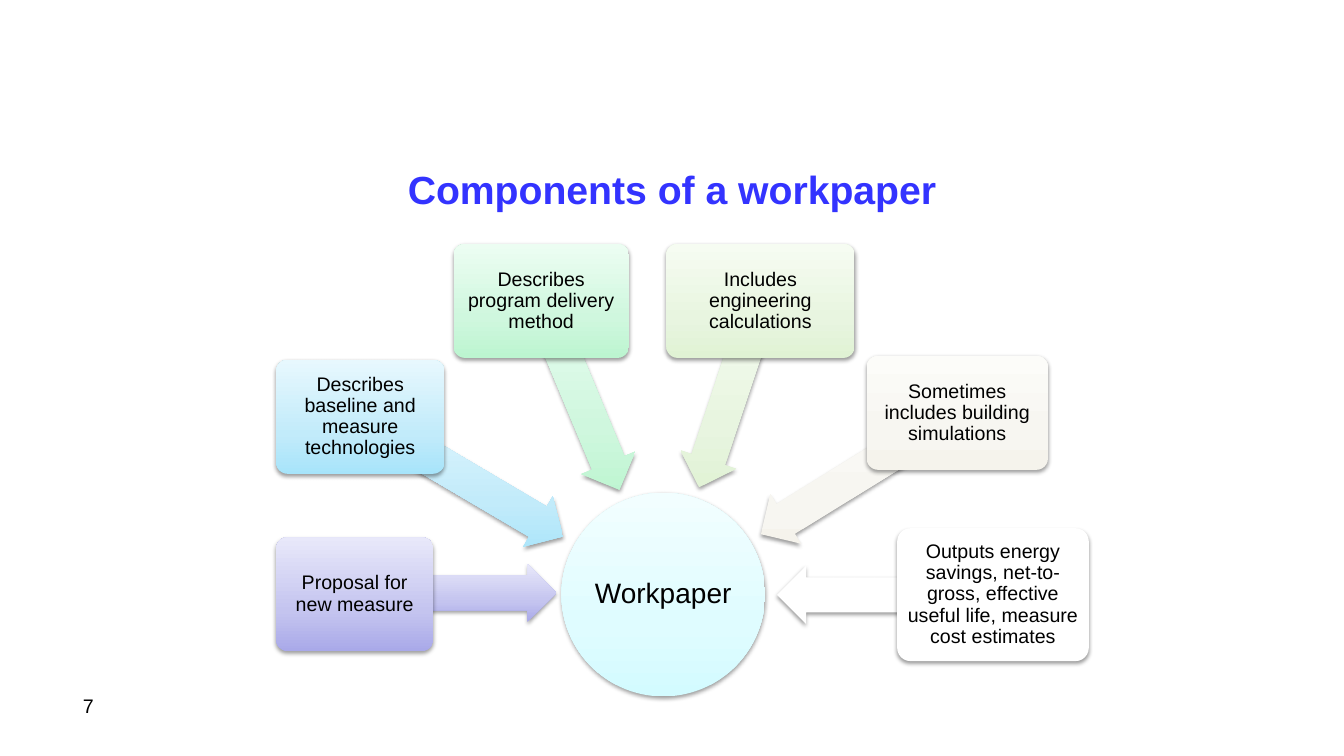
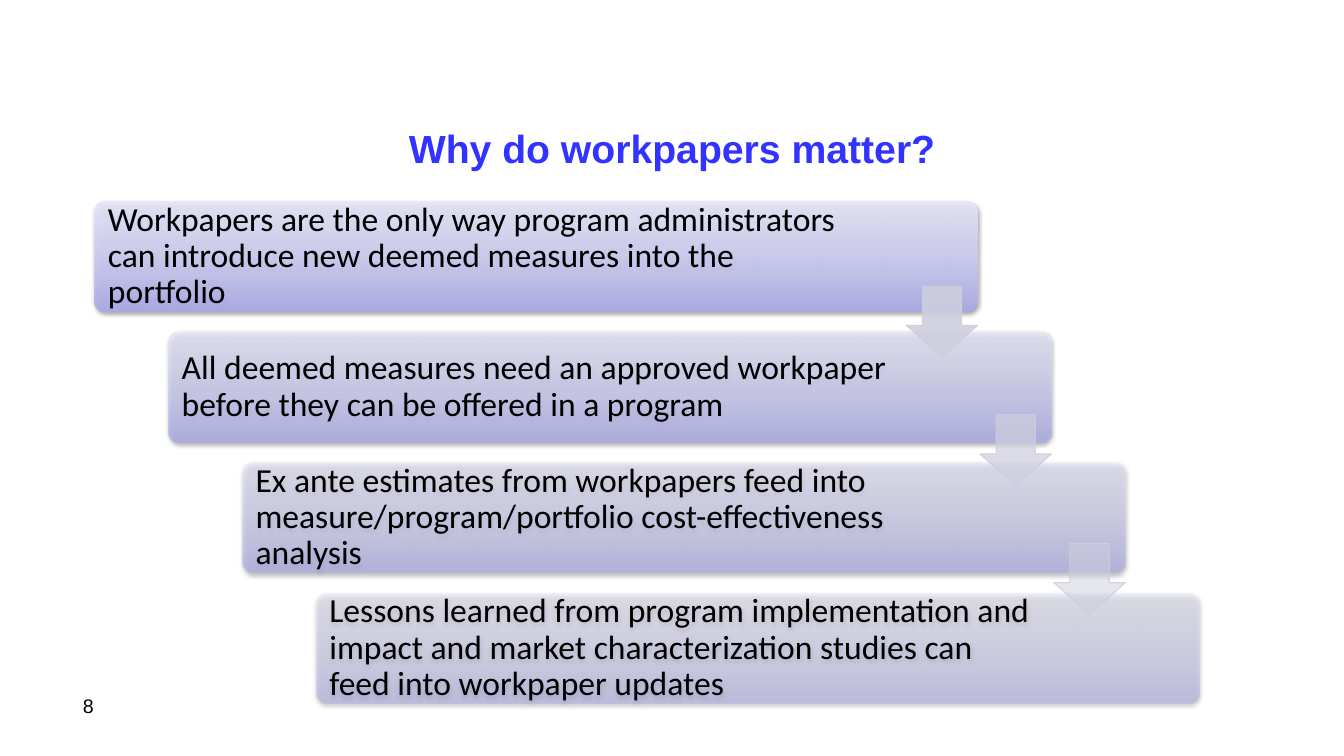
from dataclasses import dataclass

from lxml.etree import SubElement
from pptx import Presentation
from pptx.dml.color import RGBColor
from pptx.enum.shapes import MSO_SHAPE as Preset
from pptx.enum.text import MSO_ANCHOR as Anchor, PP_ALIGN as Align
from pptx.oxml.ns import qn
from pptx.shapes.autoshape import Shape
from pptx.slide import Slide
from pptx.util import Cm, Pt

Gradient = tuple[str, str, str]


@dataclass(frozen=True)
class Theme:
    title_color: str = "3333FF"
    text_color: str = "000000"
    shadow_color: str = "000000"
    arrow_color: str = "CECEDE"
    white: str = "FFFFFF"
    aqua: Gradient = ("D3FBFF", "DFFCFF", "F2FEFF")
    violet: Gradient = ("A9A9E9", "C4C4EF", "E8E8FA")
    sky: Gradient = ("A7E4FA", "C2EBFA", "E7F8FE")
    mint: Gradient = ("BCF5D0", "CFF7DE", "ECFDF2")
    lime: Gradient = ("E0F2D4", "E8F5E0", "F6FCF2")
    sand: Gradient = ("F5F3EC", "F7F6F1", "FCFCF9")
    stops: tuple[int, int, int] = (0, 35, 100)
    font: str = "Arial"
    step_font: str = "Calibri"
    title_size: int = 28
    step_size: int = 24
    hub_size: int = 20
    body_size: int = 14


THEME = Theme()
SLIDE_WIDTH, SLIDE_HEIGHT = 33.87, 19.05


@dataclass(frozen=True)
class Area:
    left: float
    top: float
    width: float
    height: float

    def lengths(self) -> tuple[Cm, Cm, Cm, Cm]:
        return Cm(self.left), Cm(self.top), Cm(self.width), Cm(self.height)


@dataclass(frozen=True)
class Spoke:
    center_x: float
    center_y: float
    length: float
    angle: float

    def area(self, thickness: float) -> Area:
        return Area(self.center_x - self.length / 2, self.center_y - thickness / 2,
                    self.length, thickness)


@dataclass(frozen=True)
class Component:
    text: str
    area: Area
    spoke: Spoke
    fill: Gradient | str


BOX_HEIGHT = 2.87
COMPONENTS = (
    Component("Proposal for new measure", Area(6.96, 13.54, 3.96, BOX_HEIGHT),
              Spoke(11.56, 14.94, 4.93, 180), THEME.violet),
    Component("Describes baseline and measure technologies",
              Area(6.96, 9.07, 4.24, BOX_HEIGHT),
              Spoke(11.63, 12.01, 5.94, 210.5), THEME.sky),
    Component("Describes program delivery method",
              Area(11.43, 6.15, 4.42, BOX_HEIGHT),
              Spoke(14.62, 9.96, 5.16, 247.4), THEME.mint),
    Component("Includes engineering calculations",
              Area(16.79, 6.15, 4.75, BOX_HEIGHT),
              Spoke(18.4, 9.93, 4.95, 288.4), THEME.lime),
    Component("Sometimes includes building simulations",
              Area(21.84, 8.97, 4.57, BOX_HEIGHT),
              Spoke(21.64, 11.94, 5.79, 328.3), THEME.sand),
    Component("Outputs energy savings, net-to-gross, effective useful life, "
              "measure cost estimates", Area(22.61, 13.31, 4.83, 3.35),
              Spoke(22.3, 14.99, 5.44, 0), THEME.white),
)

REASONS = (
    "Workpapers are the only way program administrators can introduce new "
    "deemed measures into the portfolio",
    "All deemed measures need an approved workpaper before they can be "
    "offered in a program",
    "Ex ante estimates from workpapers feed into "
    "measure/program/portfolio cost-effectiveness analysis",
    "Lessons learned from program implementation and impact and market "
    "characterization studies can feed into workpaper updates",
)


def add_color(parent, color: str, alpha: float):
    node = SubElement(parent, qn("a:srgbClr"), val=color)
    if alpha < 100:
        SubElement(node, qn("a:alpha"), val=str(round(alpha * 1000)))


def paint(shape: Shape, fill: Gradient | str, alpha: float = 100):
    shape.fill.solid()
    solid = shape.element.spPr.find(qn("a:solidFill"))
    if isinstance(fill, str):
        for child in list(solid):
            solid.remove(child)
        add_color(solid, fill, alpha)
        return
    gradient = solid.makeelement(qn("a:gradFill"), {"rotWithShape": "0"})
    stops = SubElement(gradient, qn("a:gsLst"))
    for position, color in zip(THEME.stops, fill):
        stop = SubElement(stops, qn("a:gs"), pos=str(position * 1000))
        add_color(stop, color, alpha)
    SubElement(gradient, qn("a:lin"), ang="16200000", scaled="0")
    solid.getparent().replace(solid, gradient)


def add_shadow(shape: Shape):
    effects = shape.element.spPr.find(qn("a:effectLst"))
    shadow = SubElement(effects, qn("a:outerShdw"), blurRad=str(Pt(3.1)),
                        dist=str(Pt(1.6)), dir="5400000", rotWithShape="0")
    add_color(shadow, THEME.shadow_color, 38)


def add_preset(slide: Slide, preset: Preset, area: Area, adjustments: tuple[float, ...],
               fill: Gradient | str, alpha: float = 100, shadow: bool = True) -> Shape:
    shape = slide.shapes.add_shape(preset, *area.lengths())
    for index, value in enumerate(adjustments):
        shape.adjustments[index] = value
    paint(shape, fill, alpha)
    shape.line.fill.background()
    shape.shadow.inherit = False
    if shadow:
        add_shadow(shape)
    return shape


def write(shape: Shape, text: str, size: int, font: str = THEME.font,
          color: str = THEME.text_color, bold: bool = False,
          align: Align = Align.CENTER, anchor: Anchor = Anchor.MIDDLE,
          spacing: float = 0.9, insets: tuple[float, float, float] = (0.08, 0.08, 0.08)):
    frame = shape.text_frame
    frame.word_wrap = True
    frame.vertical_anchor = anchor
    left, right, vertical = insets
    frame.margin_left, frame.margin_right = Cm(left), Cm(right)
    frame.margin_top = frame.margin_bottom = Cm(vertical)
    para = frame.paragraphs[0]
    para.alignment = align
    para.line_spacing = spacing
    span = para.add_run()
    span.text = text
    span.font.name = font
    span.font.size = Pt(size)
    span.font.bold = bold
    span.font.color.rgb = RGBColor.from_string(color)


def add_page(deck: Presentation, title: str, title_top: float, number: int) -> Slide:
    page = deck.slides.add_slide(deck.slide_layouts[6])
    margin = 1.7
    title_area = Area(margin, title_top, SLIDE_WIDTH - 2 * margin, 2.75)
    title_box = page.shapes.add_textbox(*title_area.lengths())
    write(title_box, title, THEME.title_size, color=THEME.title_color, bold=True,
          spacing=1.0, insets=(0.25, 0.25, 0.13))
    number_box = page.shapes.add_textbox(*Area(margin, 17.35, 6.2, 1.32).lengths())
    write(number_box, f" {number}", THEME.body_size, align=Align.LEFT,
          anchor=Anchor.TOP, spacing=1.0, insets=(0.25, 0.25, 0.13))
    return page


def build_components(deck: Presentation):
    page = add_page(deck, "Components of a workpaper", 3.38, 7)
    hub = add_preset(page, Preset.OVAL, Area(14.15, 12.42, 5.13, 5.13), (), THEME.aqua)
    write(hub, "Workpaper", THEME.hub_size, insets=(0.03, 0.03, 0.03))
    for component in COMPONENTS:
        arrow = add_preset(page, Preset.LEFT_ARROW, component.spoke.area(1.47),
                           (0.6, 0.5), component.fill)
        arrow.rotation = component.spoke.angle
        box = add_preset(page, Preset.ROUNDED_RECTANGLE, component.area,
                         (0.1,), component.fill)
        write(box, component.text, THEME.body_size)


def build_reasons(deck: Presentation):
    page = add_page(deck, "Why do workpapers matter?", 2.34, 8)
    left, top, width, height = 2.39, 5.08, 22.25, 2.77
    step_x, step_y = 1.86, 3.29
    arrow_size, arrow_top, arrow_step = 1.8, 7.21, 3.24
    last = len(REASONS) - 1
    for index, reason in enumerate(REASONS):
        area = Area(left + index * step_x, top + index * step_y, width, height)
        box = add_preset(page, Preset.ROUNDED_RECTANGLE, area, (0.1,),
                         THEME.violet, 90 - 40 * index / last)
        right_inset = 3.94 if index else 3.33
        write(box, reason, THEME.step_size, THEME.step_font, align=Align.LEFT,
              insets=(0.25, right_inset, 0))
    for index in range(last):
        area = Area(left + index * step_x + width - arrow_size,
                    arrow_top + index * arrow_step, arrow_size, arrow_size)
        arrow = add_preset(page, Preset.DOWN_ARROW, area, (0.55, 0.45),
                           THEME.arrow_color, 90 - 20 * index, shadow=False)
        arrow.line.width = Pt(0.75)
        arrow.line.color.rgb = RGBColor.from_string(THEME.arrow_color)
        outline = arrow.line.fill._xPr.find(qn("a:solidFill"))
        SubElement(outline[0], qn("a:alpha"), val="90000")


def main():
    deck = Presentation()
    deck.slide_width, deck.slide_height = Cm(SLIDE_WIDTH), Cm(SLIDE_HEIGHT)
    build_components(deck)
    build_reasons(deck)
    deck.save("out.pptx")


if __name__ == "__main__":
    main()
